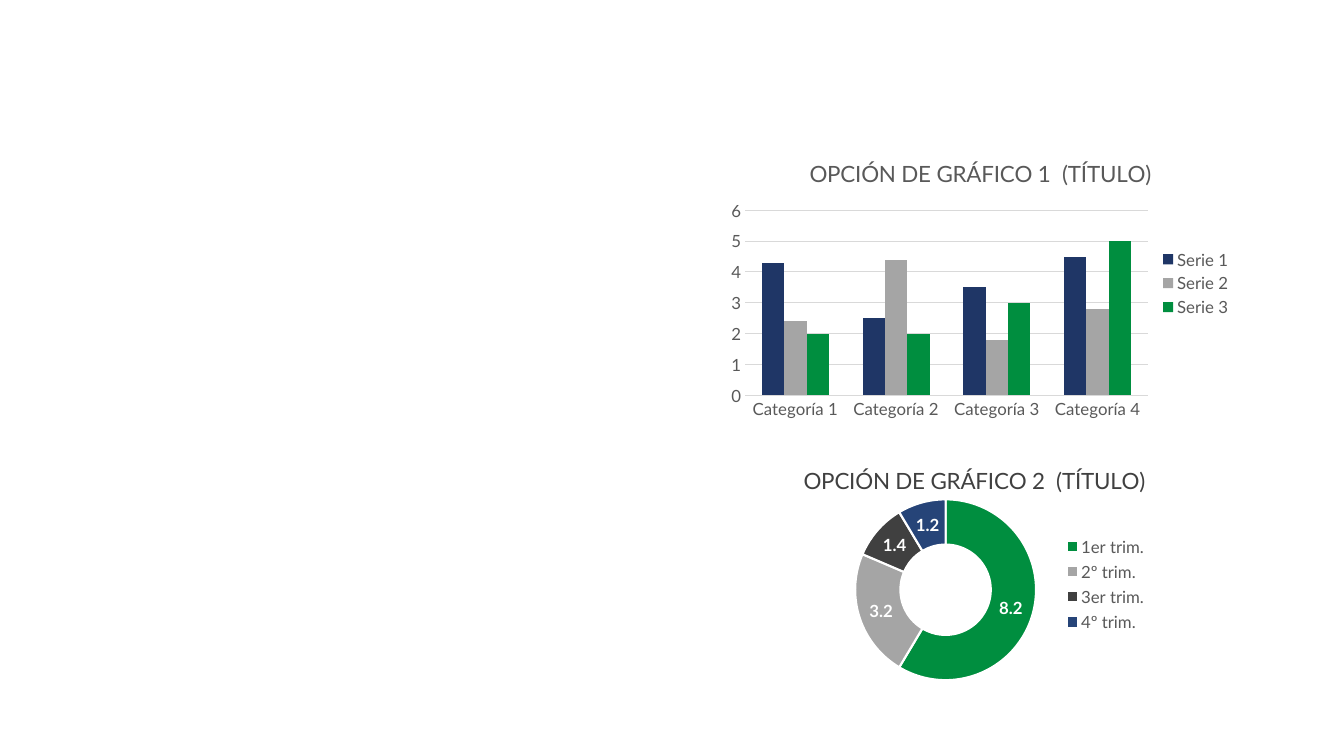
from lxml import etree
from pptx import Presentation
from pptx.chart.data import CategoryChartData
from pptx.dml.color import RGBColor
from pptx.enum import chart as kinds
from pptx.oxml.ns import qn
from pptx.util import Inches, Pt

FONT = "Lato"
NAVY = RGBColor(0x1F, 0x36, 0x66)
BLUE = RGBColor(0x26, 0x44, 0x78)
GREEN = RGBColor(0x00, 0x8E, 0x3F)
SILVER = RGBColor(0xA5, 0xA5, 0xA5)
CHARCOAL = RGBColor(0x40, 0x40, 0x40)
GRAY = RGBColor(0x59, 0x59, 0x59)
PALE = RGBColor(0xD9, 0xD9, 0xD9)
WHITE = RGBColor(0xFF, 0xFF, 0xFF)


def set_font(font, size, color, bold=False):
    font.name = FONT
    font.size = Pt(size)
    font.bold = bold
    font.color.rgb = color


def fill(part, color):
    part.format.fill.solid()
    part.format.fill.fore_color.rgb = color


def place(parent, index, inner=False, **fractions):
    for old in parent.findall(qn("c:layout")):
        parent.remove(old)
    layout = etree.Element(qn("c:layout"))
    manual = etree.SubElement(layout, qn("c:manualLayout"))
    settings = [("layoutTarget", "inner")] if inner else []
    settings += [("xMode", "edge"), ("yMode", "edge")]
    settings += [(key, str(value)) for key, value in fractions.items()]
    for tag, value in settings:
        etree.SubElement(manual, qn(f"c:{tag}")).set("val", value)
    parent.insert(index, layout)


def add_chart(page, kind, bounds, title, title_color, categories, series):
    data = CategoryChartData()
    data.categories = categories
    for name, values in series:
        data.add_series(name, values)
    frame = page.shapes.add_chart(kind, *map(Inches, bounds), data)
    chart = frame.chart
    set_font(chart.font, 12, GRAY)
    chart.has_title = True
    span = chart.chart_title.text_frame.paragraphs[0].add_run()
    span.text = title
    set_font(span.font, 16, title_color)
    chart.has_legend = True
    chart.legend.position = kinds.XL_LEGEND_POSITION.RIGHT
    chart.legend.include_in_layout = False
    set_font(chart.legend.font, 12, GRAY)
    return chart


def plot_area(chart):
    return chart.plots[0]._element.getparent()


def style_columns(chart, colors):
    plot = chart.plots[0]
    plot.gap_width = 150
    plot.vary_by_categories = False
    for series, color in zip(plot.series, colors):
        fill(series, color)
    for axis in (chart.category_axis, chart.value_axis):
        axis.major_tick_mark = kinds.XL_TICK_MARK.NONE
        axis.minor_tick_mark = kinds.XL_TICK_MARK.NONE
        set_font(axis.tick_labels.font, 12, GRAY)
    grid = chart.value_axis.major_gridlines.format.line
    for line in (chart.category_axis.format.line, grid):
        line.color.rgb = PALE
        line.width = Pt(0.75)
    chart.value_axis.format.line.fill.background()
    place(plot_area(chart), 0, True, x=0.05, y=0.24, w=0.77, h=0.66)


def style_doughnut(chart, colors):
    plot = chart.plots[0]
    plot.vary_by_categories = True
    plot._element.find(qn("c:holeSize")).set("val", "58")
    series = plot.series[0]
    for index, color in enumerate(colors):
        point = series.points[index]
        fill(point, color)
        point.format.line.color.rgb = WHITE
        point.format.line.width = Pt(1.5)
    labels = series.data_labels
    labels.show_value = True
    labels.show_percentage = False
    set_font(labels.font, 12, WHITE, bold=True)
    place(plot_area(chart), 0, True, x=0.32, y=0.21, w=0.39, h=0.66)
    place(chart.chart_title._element, 1, x=0.2, y=0.08)
    place(chart.legend._element, 1, x=0.76, y=0.33, w=0.2, h=0.38)


def main():
    deck = Presentation()
    deck.slide_width = Inches(13.33)
    deck.slide_height = Inches(7.5)
    page = deck.slides.add_slide(deck.slide_layouts[6])

    columns = add_chart(
        page, kinds.XL_CHART_TYPE.COLUMN_CLUSTERED, (7.13, 1.42, 5.19, 2.78),
        "OPCIÓN DE GRÁFICO 1  (TÍTULO)", GRAY,
        [f"Categoría {number}" for number in range(1, 5)],
        [("Serie 1", (4.3, 2.5, 3.5, 4.5)),
         ("Serie 2", (2.4, 4.4, 1.8, 2.8)),
         ("Serie 3", (2, 2, 3, 5))])
    style_columns(columns, (NAVY, SILVER, GREEN))

    doughnut = add_chart(
        page, kinds.XL_CHART_TYPE.DOUGHNUT, (7.01, 4.35, 4.6, 2.78),
        "OPCIÓN DE GRÁFICO 2  (TÍTULO)", CHARCOAL,
        ["1er trim.", "2º trim.", "3er trim.", "4º trim."],
        [("Series 1", (8.2, 3.2, 1.4, 1.2))])
    style_doughnut(doughnut, (GREEN, SILVER, CHARCOAL, BLUE))

    deck.save("out.pptx")


if __name__ == "__main__":
    main()
